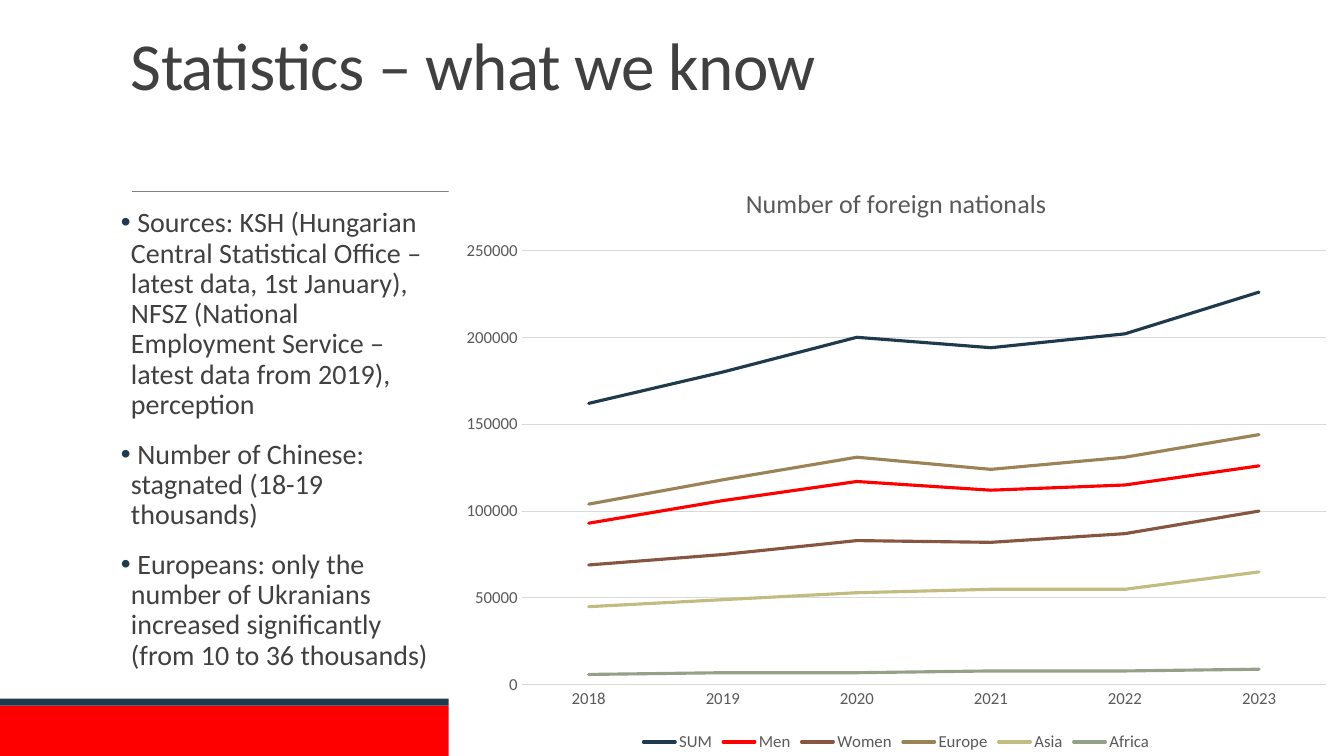
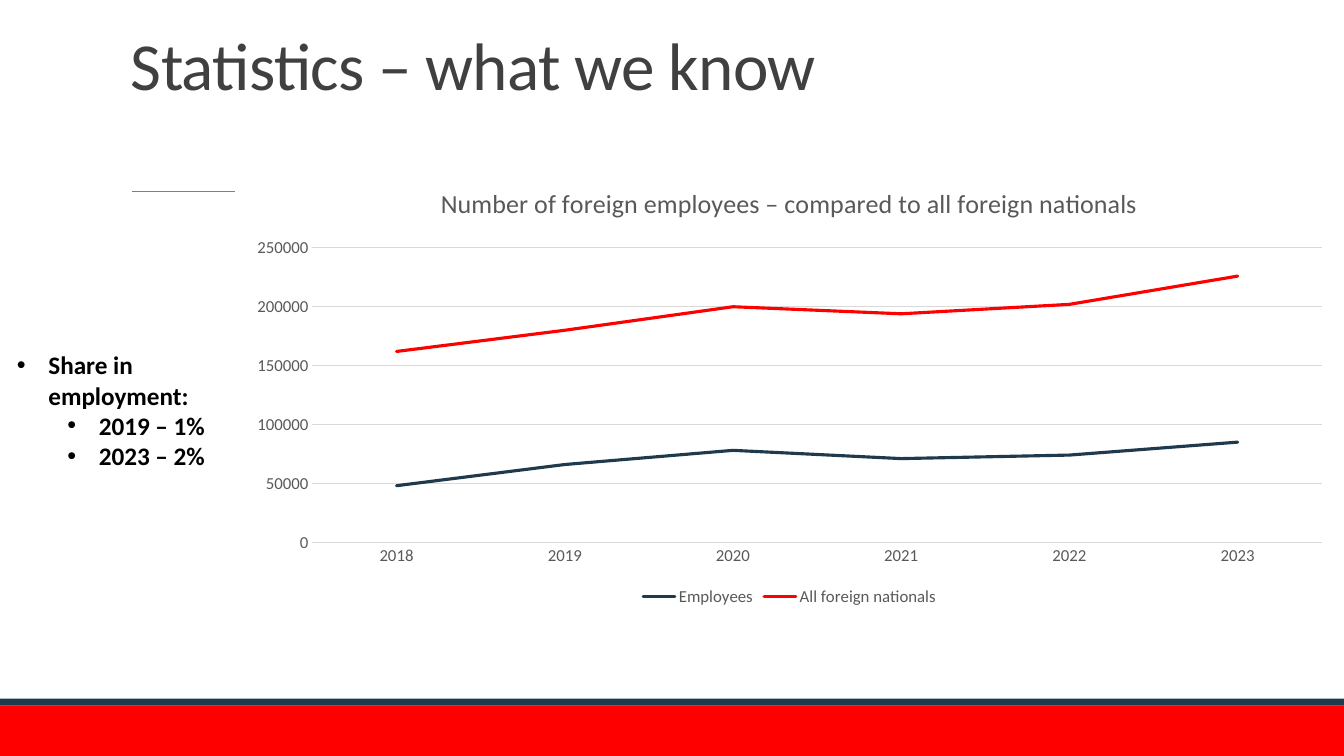
from lxml import etree
from pptx import Presentation
from pptx.chart.data import CategoryChartData
from pptx.dml.color import RGBColor
from pptx.enum.chart import XL_CHART_TYPE as CT, XL_LEGEND_POSITION as LP, XL_TICK_MARK as TM
from pptx.enum.shapes import MSO_CONNECTOR as CONN, MSO_SHAPE as SHP
from pptx.enum.text import MSO_ANCHOR as ANC, MSO_AUTO_SIZE as FIT
from pptx.oxml import parse_xml
from pptx.oxml.ns import nsdecls, qn
from pptx.util import Pt

# Shared style
W, H = 960, 540
FONT = "Calibri"
NAVY, RED, WHITE, BLACK = "1F394D", "FF0000", "FFFFFF", "000000"
TEXT, CHART_TEXT, GRID, RULE = "404040", "595959", "D9D9D9", "808080"
PALETTE = [NAVY, RED, "865640", "9B8357", "C2BC80", "94A088"]
TITLE = "Statistics – what we know"
TITLE_BOX = (86.4, 13.7, 792, 64)

# Chart data
YEARS = ["2018", "2019", "2020", "2021", "2022", "2023"]
ALL_NATIONALS = [162000, 180000, 200000, 194000, 202000, 226000]
NATIONALS = {
    "SUM": ALL_NATIONALS,
    "Men": [93000, 106000, 117000, 112000, 115000, 126000],
    "Women": [69000, 75000, 83000, 82000, 87000, 100000],
    "Europe": [104000, 118000, 131000, 124000, 131000, 144000],
    "Asia": [45000, 49000, 53000, 55000, 55000, 65000],
    "Africa": [6000, 7000, 7000, 8000, 8000, 9000],
}
EMPLOYEES = {
    "Employees": [48000, 66000, 78000, 71000, 74000, 85000],
    "All foreign nationals": ALL_NATIONALS,
}
SOURCES = [
    " Sources: KSH (Hungarian Central Statistical Office – latest data, 1st January), "
    "NFSZ (National Employment Service – latest data from 2019), perception",
    " Number of Chinese: stagnated (18-19 thousands)",
    " Europeans: only the number of Ukranians increased significantly "
    "(from 10 to 36 thousands)",
]
SHARES = [("Share in employment:", 0), ("2019 – 1%", 1), ("2023 – 2%", 1)]


def rgb(color):
    return RGBColor.from_string(color)


def box_pt(box):
    return [Pt(v) for v in box]


def set_font(font, size, color, bold=False):
    font.name, font.size, font.bold = FONT, Pt(size), bold
    font.color.rgb = rgb(color)


def set_line(line, color, width):
    line.color.rgb = rgb(color)
    line.width = Pt(width)


def add_text(s, box):
    tf = s.shapes.add_textbox(*box_pt(box)).text_frame
    tf.word_wrap = True
    return tf


def add_lines(tf, texts):
    """Write one paragraph per text and return the paragraphs."""
    tf.text = "\n".join(texts)
    return tf.paragraphs


def set_bullet(p, margin, hang, color):
    pPr = p._p.get_or_add_pPr()
    pPr.set("marL", str(Pt(margin)))
    pPr.set("indent", str(-Pt(hang)))
    clr = etree.SubElement(pPr, qn("a:buClr"))
    etree.SubElement(clr, qn("a:srgbClr"), val=color)
    etree.SubElement(pPr, qn("a:buFont"), typeface="Arial")
    etree.SubElement(pPr, qn("a:buChar"), char="•")


# Bottom bands and the rule below the title
def add_frame(s):
    for top, height, color in ((504, 36, RED), (499, 5, NAVY)):
        sp = s.shapes.add_shape(SHP.RECTANGLE, *box_pt((0, top, W, height)))
        sp.shadow.inherit = False
        sp.fill.solid()
        sp.fill.fore_color.rgb = rgb(color)
        sp.line.fill.background()
    rule = s.shapes.add_connector(CONN.STRAIGHT, *box_pt((94.3, 136.5, 879, 136.5)))
    set_line(rule.line, RULE, 0.5)
    etree.SubElement(rule._element.spPr, qn("a:effectLst"))


def add_title(s, box):
    tf = add_text(s, box)
    tf.vertical_anchor = ANC.BOTTOM
    p, = add_lines(tf, [TITLE])
    p.line_spacing = 0.85
    r = p.runs[0]
    set_font(r.font, 48, TEXT)
    r._r.get_or_add_rPr().set("spc", "-50")


def add_sources(s, box):
    tf = add_text(s, box)
    tf.margin_left = tf.margin_right = 0
    for p in add_lines(tf, SOURCES):
        p.line_spacing, p.space_before, p.space_after = 0.9, Pt(12), Pt(2)
        set_bullet(p, 7.2, 7.2, NAVY)
        set_font(p.runs[0].font, 20, TEXT)


def add_shares(s, box):
    tf = add_text(s, box)
    tf.auto_size = FIT.SHAPE_TO_FIT_TEXT
    for p, (_, level) in zip(add_lines(tf, [t for t, _ in SHARES]), SHARES):
        p.level = level
        set_bullet(p, 22.5 + 36 * level, 22.5, BLACK)
        set_font(p.runs[0].font, 18, BLACK, bold=True)


def add_line_chart(s, box, title, series):
    data = CategoryChartData()
    data.categories = YEARS
    for name, values in series.items():
        data.add_series(name, values)
    chart = s.shapes.add_chart(CT.LINE, *box_pt(box), data).chart
    set_font(chart.font, 10, BLACK)

    # Title and legend
    chart.has_title = True
    tf = chart.chart_title.text_frame
    tf.text = title
    set_font(tf.paragraphs[0].runs[0].font, 18.6, CHART_TEXT)
    chart.chart_title.include_in_layout = False
    chart.has_legend = True
    chart.legend.position = LP.BOTTOM
    chart.legend.include_in_layout = False
    set_font(chart.legend.font, 12, CHART_TEXT)

    # Axes
    for axis in (chart.category_axis, chart.value_axis):
        axis.major_tick_mark = axis.minor_tick_mark = TM.NONE
        set_font(axis.tick_labels.font, 12, CHART_TEXT)
    set_line(chart.category_axis.format.line, GRID, 0.75)
    chart.value_axis.format.line.fill.background()
    chart.value_axis.has_major_gridlines = True
    set_line(chart.value_axis.major_gridlines.format.line, GRID, 0.75)

    # Series
    plot = chart.plots[0]
    plot.vary_by_categories = False
    for ser, color in zip(plot.series, PALETTE):
        ser.smooth = False
        set_line(ser.format.line, color, 2.25)
        ser.format.line._get_or_add_ln().set("cap", "rnd")

    # White chart area without a border
    area = parse_xml(
        f'<c:spPr {nsdecls("c", "a")}><a:solidFill><a:srgbClr val="{WHITE}"/>'
        "</a:solidFill><a:ln><a:noFill/></a:ln></c:spPr>")
    chart.element.find(qn("c:chart")).addnext(area)


def add_base_slide(prs):
    s = prs.slides.add_slide(prs.slide_layouts[6])
    add_frame(s)
    add_title(s, TITLE_BOX)
    return s


def nationals_slide(prs):
    s = add_base_slide(prs)
    add_sources(s, (86.4, 145.5, 221, 350))
    add_line_chart(s, (320.5, 116.6, 639.5, 423.4),
                   "Number of foreign nationals", NATIONALS)


def employees_slide(prs):
    s = add_base_slide(prs)
    add_line_chart(s, (168, 119, 792, 317),
                   "Number of foreign employees – compared to all foreign nationals",
                   EMPLOYEES)
    add_shares(s, (5, 246.2, 163, 94.3))


def main():
    prs = Presentation()
    prs.slide_width, prs.slide_height = Pt(W), Pt(H)
    nationals_slide(prs)
    employees_slide(prs)
    prs.save("out.pptx")


if __name__ == "__main__":
    main()
